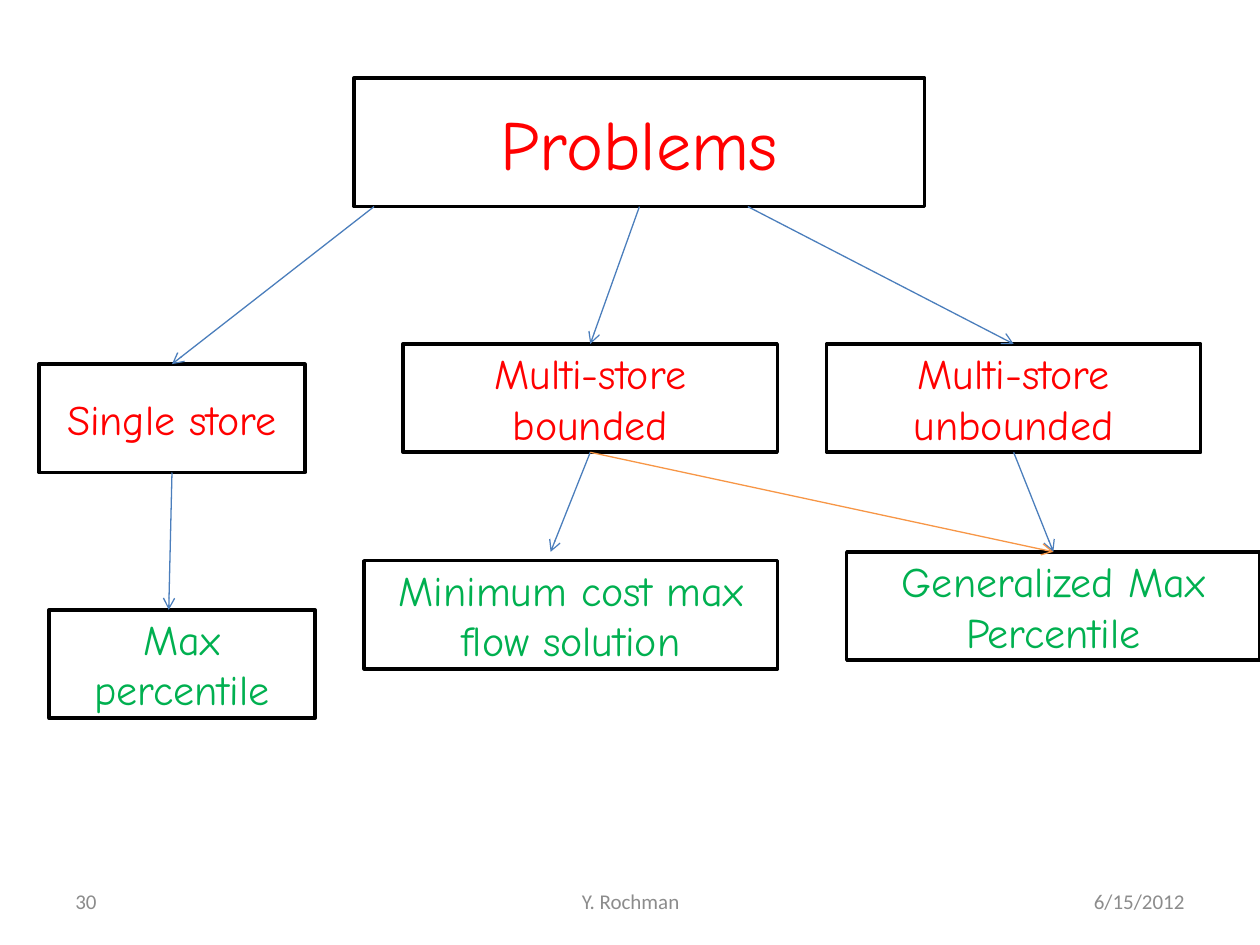
from dataclasses import dataclass

from lxml.etree import SubElement
from pptx import Presentation
from pptx.dml.color import RGBColor as RGB
from pptx.enum.shapes import MSO_CONNECTOR as Connector, MSO_SHAPE as Shape
from pptx.enum.text import MSO_ANCHOR as Anchor, PP_ALIGN as Align
from pptx.oxml.ns import qn
from pptx.util import Inches, Pt


@dataclass(frozen=True)
class Theme:
    paper: RGB = RGB(255, 255, 255)
    border: RGB = RGB(0, 0, 0)
    problem: RGB = RGB(255, 0, 0)
    solution: RGB = RGB(0, 176, 80)
    arrow: RGB = RGB(0x4B, 0x7E, 0xBC)
    cross_arrow: RGB = RGB(0xF7, 0x96, 0x46)
    footer: RGB = RGB(0x8C, 0x8C, 0x8C)
    box_font: str = "Comic Neue"
    footer_font: str = "Calibri"
    title_size: int = 40
    box_size: int = 24
    footer_size: int = 12
    border_width: float = 2
    arrow_width: float = 0.75


@dataclass(frozen=True)
class Box:
    """A rectangle in grid columns and rows."""
    left: float
    top: float
    width: float
    height: float

    def on_top(self, share=0.5):
        return self.left + share * self.width, self.top

    def on_bottom(self, share=0.5):
        return self.left + share * self.width, self.top + self.height


class Diagram:
    """Draws on a grid of 100 columns by 75 rows."""
    columns, rows = 100, 75

    def __init__(self, deck, theme):
        self.theme = theme
        self.slide = deck.slides.add_slide(deck.slide_layouts[6])
        self.column = deck.slide_width / self.columns
        self.row = deck.slide_height / self.rows

    def place(self, x, y):
        return round(x * self.column), round(y * self.row)

    def area(self, box):
        return self.place(box.left, box.top) + self.place(box.width, box.height)

    def set_text(self, holder, text, font, size, color, align):
        frame = holder.text_frame
        frame.word_wrap = True
        frame.vertical_anchor = Anchor.MIDDLE
        paragraph = frame.paragraphs[0]
        paragraph.text = text
        paragraph.alignment = align
        paragraph.font.name = font
        paragraph.font.size = Pt(size)
        paragraph.font.color.rgb = color

    def node(self, box, text, color, size=None):
        theme = self.theme
        node = self.slide.shapes.add_shape(Shape.RECTANGLE, *self.area(box))
        node.shadow.inherit = False
        node.fill.solid()
        node.fill.fore_color.rgb = theme.paper
        node.line.color.rgb = theme.border
        node.line.width = Pt(theme.border_width)
        self.set_text(node, text, theme.box_font, size or theme.box_size, color, Align.CENTER)
        return box

    def arrow(self, start, end, color=None):
        link = self.slide.shapes.add_connector(
            Connector.STRAIGHT, *self.place(*start), *self.place(*end))
        link.line.color.rgb = color or self.theme.arrow
        link.line.width = Pt(self.theme.arrow_width)
        properties = link.element.spPr
        SubElement(properties.find(qn("a:ln")), qn("a:tailEnd"), type="arrow")
        SubElement(properties, qn("a:effectLst"))

    def footer(self, left, width, text, align):
        theme = self.theme
        label = self.slide.shapes.add_textbox(*self.area(Box(left, 69.5, width, 4)))
        self.set_text(label, text, theme.footer_font, theme.footer_size, theme.footer, align)


def main():
    deck = Presentation()
    deck.slide_width, deck.slide_height = Inches(10), Inches(7.5)
    theme = Theme()
    diagram = Diagram(deck, theme)

    diagram.footer(71.7, 23.3, "6/15/2012", Align.RIGHT)
    diagram.footer(5, 23.3, "30", Align.LEFT)
    diagram.footer(34.2, 31.7, "Y. Rochman", Align.CENTER)

    height = 8.6
    problems = diagram.node(Box(28.1, 6.2, 45.3, 10.2), "Problems",
                            theme.problem, theme.title_size)
    single = diagram.node(Box(3.1, 28.9, 21.1, height), "Single store", theme.problem)
    bounded = diagram.node(Box(32, 27.3, 29.7, height), "Multi-store bounded", theme.problem)
    unbounded = diagram.node(Box(65.6, 27.3, 29.7, height), "Multi-store unbounded",
                             theme.problem)
    percentile = diagram.node(Box(3.9, 48.4, 21.1, height), "Max percentile", theme.solution)
    diagram.node(Box(28.9, 44.5, 32.8, height), "Minimum cost max flow solution",
                 theme.solution)
    generalized = diagram.node(Box(67.2, 43.8, 32.8, height), "Generalized Max Percentile",
                               theme.solution)

    for share, problem in ((0.035, single), (0.5, bounded), (0.69, unbounded)):
        diagram.arrow(problems.on_bottom(share), problem.on_top())
    diagram.arrow(single.on_bottom(), percentile.on_top(0.45))
    diagram.arrow(bounded.on_bottom(), (43.7, generalized.top))
    diagram.arrow(unbounded.on_bottom(), generalized.on_top())
    diagram.arrow(bounded.on_bottom(), generalized.on_top(), theme.cross_arrow)

    deck.save("out.pptx")


if __name__ == "__main__":
    main()
